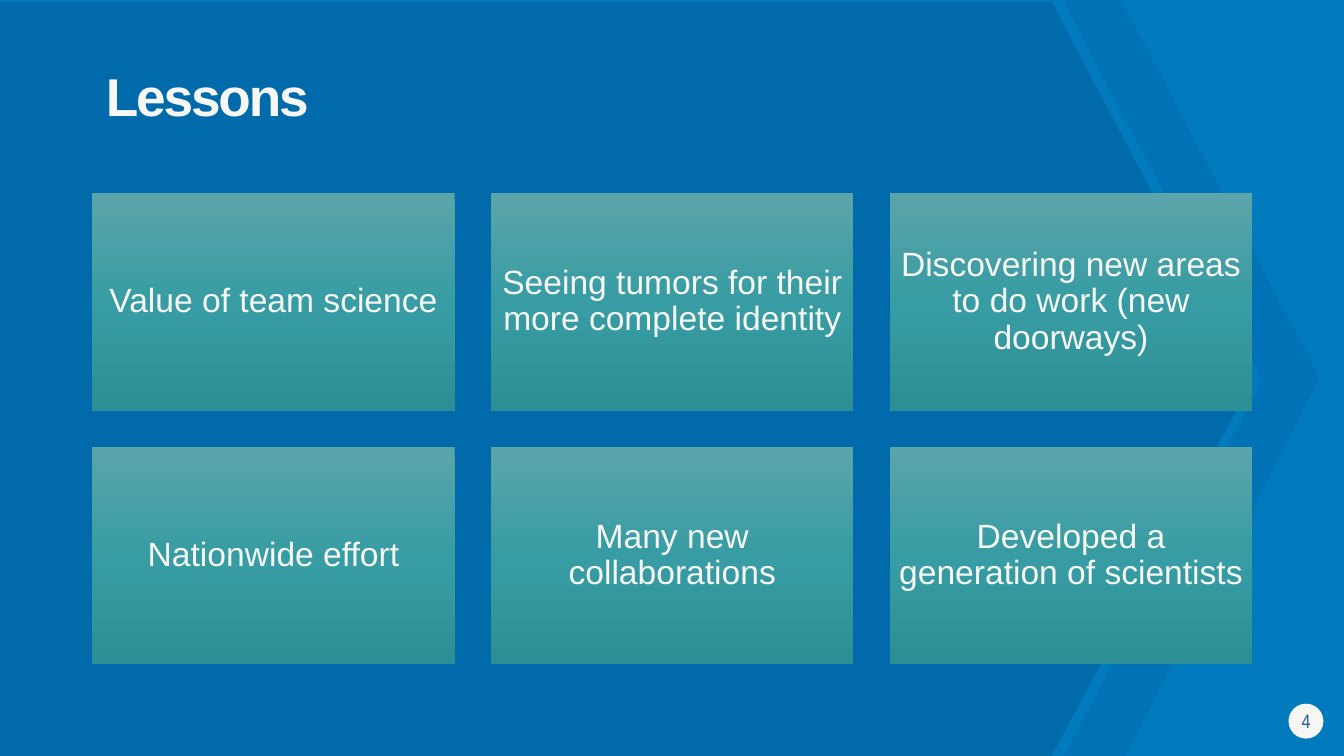
from copy import deepcopy
from dataclasses import dataclass

from pptx import Presentation
from pptx import util as u
from pptx.dml.color import RGBColor
from pptx.enum import shapes, text

Pt = u.Pt


@dataclass(frozen=True)
class Theme:
    back: str = "017BBE"
    panel: str = "006AAA"
    band: str = "0072B5"
    light: str = "F6F6F2"
    num: str = "245BAF"
    card: tuple = ((0, "5BA5AA"), (0.5, "379CA3"), (1, "2D8F95"))
    face: str = "Arial"
    slim: str = "Arial Narrow"
    head: float = 28.5
    body: float = 18
    small: float = 10.5


@dataclass(frozen=True)
class Box:
    left: float
    top: float
    wide: float
    high: float

    def emu(self) -> list:
        return [Pt(v) for v in (self.left, self.top, self.wide, self.high)]


@dataclass(frozen=True)
class Poly:
    color: str
    dots: tuple


T = Theme()

# Arrow-shaped backdrop, back to front
POLYS = (
    Poly(T.panel, ((0, 0.9), (563.2, 0.9), (670.6, 204.5), (563.2, 405.3), (0, 405.3))),
    Poly(T.band, ((569.5, 0), (600.5, 0), (707, 202.5), (602.6, 406), (569.5, 406),
                  (676.2, 203.8))),
)

LESSONS = (
    "Value of team science",
    "Seeing tumors for their more complete identity ",
    "Discovering new areas to do work (new doorways)",
    "Nationwide effort",
    "Many new collaborations",
    "Developed a generation of scientists",
)

# Card grid: the gap is a tenth of the card width
COLS = 3
LEFT, TOP = 49.4, 103.5
WIDE, HIGH = 194.2, 116.5
GAP = WIDE / 10


def assign(item, values: dict) -> None:
    for key, val in values.items():
        setattr(item, key, val)


def rgb(code: str) -> RGBColor:
    return RGBColor.from_string(code)


def paint(shape, color: str) -> None:
    shape.shadow.inherit = False
    shape.fill.solid()
    shape.fill.fore_color.rgb = rgb(color)
    shape.line.fill.background()


def blend(shape, stops: tuple) -> None:
    shape.shadow.inherit = False
    shape.line.fill.background()
    shape.fill.gradient()
    shape.fill.gradient_angle = 270
    # The default gradient has two stops; add the rest
    group = shape._element.xpath(".//a:gsLst")[0]
    while len(group) < len(stops):
        group.append(deepcopy(group[0]))
    for stop, (pos, color) in zip(shape.fill.gradient_stops, stops):
        stop.position = pos
        stop.color.rgb = rgb(color)


def write(shape, words: str, inset: float, wrap: bool, para: dict, font: dict,
          color: str) -> None:
    frame = shape.text_frame
    frame.text = words
    sides = ("left", "top", "right", "bottom")
    assign(frame, {f"margin_{side}": Pt(inset) for side in sides})
    assign(frame, {"word_wrap": wrap, "vertical_anchor": text.MSO_ANCHOR.MIDDLE})
    line = frame.paragraphs[0]
    assign(line, para)
    run = line.runs[0]
    assign(run.font, font)
    run.font.color.rgb = rgb(color)


def draw_poly(slide, poly: Poly) -> None:
    dots = [(Pt(x), Pt(y)) for x, y in poly.dots]
    pen = slide.shapes.build_freeform(*dots[0])
    pen.add_line_segments(dots[1:], close=True)
    paint(pen.convert_to_shape(), poly.color)


def draw_badge(slide, box: Box, words: str) -> None:
    disc = slide.shapes.add_shape(shapes.MSO_SHAPE.OVAL, *box.emu())
    paint(disc, T.light)
    write(disc, words, 0, False, {"alignment": text.PP_ALIGN.CENTER},
          {"name": T.slim, "size": Pt(T.small)}, T.num)


def draw_title(slide, box: Box, words: str) -> None:
    title = slide.shapes.title
    slide.shapes._spTree.append(title._element)  # bring above the backdrop
    assign(title, dict(zip(("left", "top", "width", "height"), box.emu())))
    write(title, words, 7.2, True,
          {"alignment": text.PP_ALIGN.LEFT, "line_spacing": 0.9},
          {"name": T.face, "size": Pt(T.head), "bold": True}, T.light)
    run = title.text_frame.paragraphs[0].runs[0]
    run._r.get_or_add_rPr().set("spc", "-110")


def draw_card(slide, box: Box, words: str) -> None:
    card = slide.shapes.add_shape(shapes.MSO_SHAPE.RECTANGLE, *box.emu())
    blend(card, T.card)
    write(card, words, 5, True,
          {"alignment": text.PP_ALIGN.CENTER, "line_spacing": 0.9},
          {"name": T.face, "size": Pt(T.body)}, T.light)


def main() -> None:
    deck = Presentation()
    assign(deck, {"slide_width": Pt(720), "slide_height": Pt(405)})
    slide = deck.slides.add_slide(deck.slide_layouts[5])
    slide.background.fill.solid()
    slide.background.fill.fore_color.rgb = rgb(T.back)

    # Backdrop, page number and title
    for poly in POLYS:
        draw_poly(slide, poly)
    draw_badge(slide, Box(690.3, 377, 18.7, 18.7), "4")
    draw_title(slide, Box(49.5, 14.4, 621, 77.8), "Lessons")

    # Lesson cards
    for i, words in enumerate(LESSONS):
        row, col = divmod(i, COLS)
        box = Box(LEFT + col * (WIDE + GAP), TOP + row * (HIGH + GAP), WIDE, HIGH)
        draw_card(slide, box, words)

    deck.save("out.pptx")


if __name__ == "__main__":
    main()
